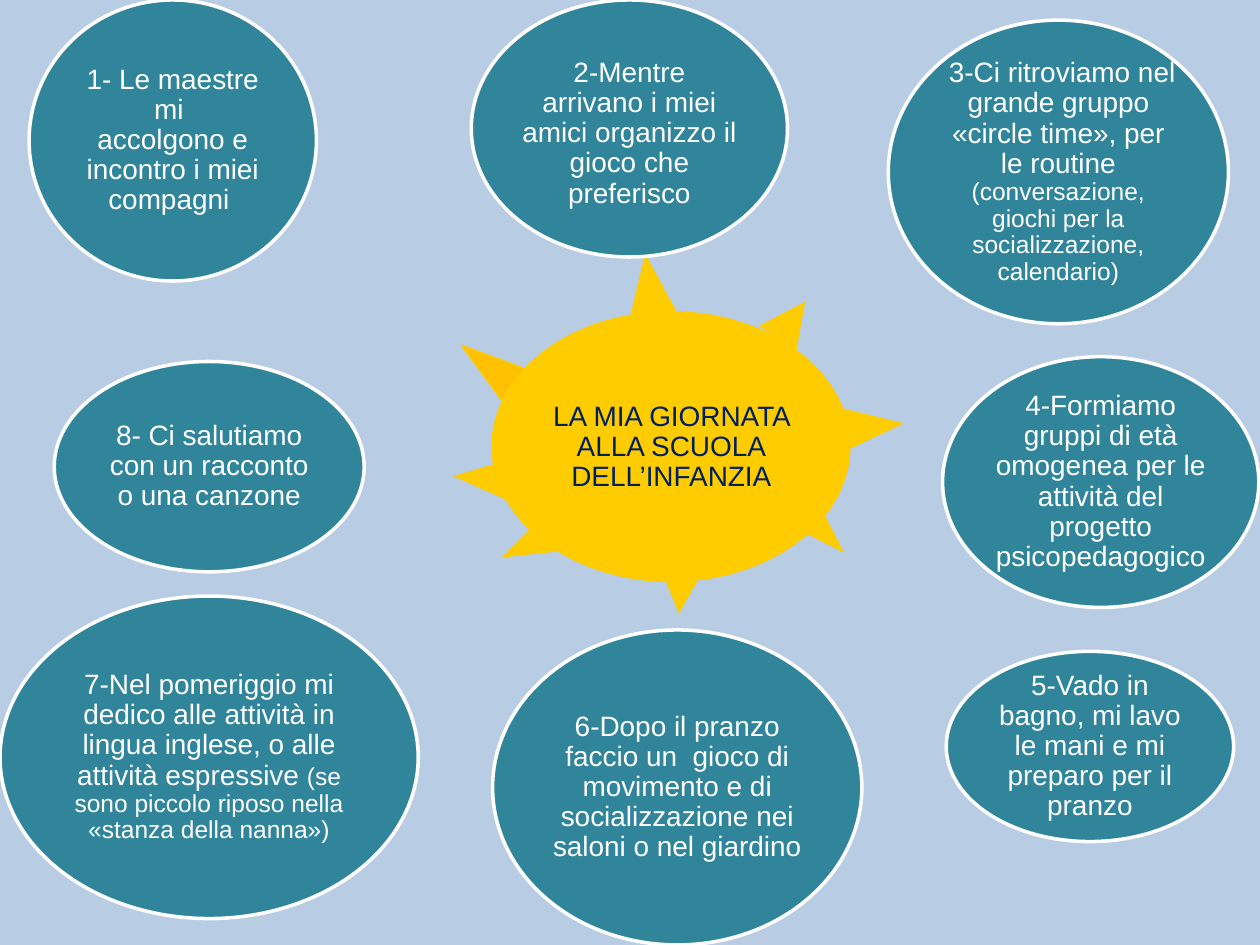
"""Build a slide showing a nursery school day as bubbles around a sun."""
from pptx import Presentation
from pptx.dml.color import RGBColor
from pptx.enum.shapes import MSO_SHAPE
from pptx.enum.text import MSO_ANCHOR, MSO_AUTO_SIZE, PP_ALIGN
from pptx.util import Pt

SKY = RGBColor(0xB8, 0xCC, 0xE4)
TEAL = RGBColor(0x31, 0x85, 0x9B)
WHITE = RGBColor(0xFF, 0xFF, 0xFF)
YELLOW = RGBColor(0xFF, 0xCC, 0x00)
ORANGE = RGBColor(0xFF, 0xC0, 0x00)
NAVY = RGBColor(0x00, 0x20, 0x60)

LARGE, SMALL = 16, 14
INSET = 1.44

TITLE = [[("LA MIA GIORNATA ALLA SCUOLA", LARGE)], [("DELL’INFANZIA", LARGE)]]
TITLE_PLACE = (311, 200.9, 145.4, 109.4)
SUN_PLACE = (280.8, 177.8, 205.2, 154.8)

RAYS = [
    (267.8, 188.6, 26, 43.2, 307, ORANGE),
    (263.5, 255.6, 26, 35.3, 273.8, YELLOW),
    (290.2, 292.3, 26, 36.7, 244.4, YELLOW),
    (375.8, 324, 26, 26.6, 183.8, YELLOW),
    (357.1, 144.7, 28, 36.7, 352.5, YELLOW),
    (485.3, 225.4, 26, 36.7, 84.2, YELLOW),
    (439.2, 169.9, 26, 26.6, 36.2, YELLOW),
    (455, 281.5, 26, 40.3, 134.8, YELLOW),
]

BUBBLES = [
    ((16.6, 0, 164.2, 160.6), INSET, [
        [("1- Le maestre mi ", LARGE)],
        [("accolgono e incontro i miei", LARGE)],
        [("compagni ", LARGE)]]),
    ((269.3, 0, 180.7, 146.9), INSET + 6, [
        [("2-Mentre arrivano i miei amici organizzo il gioco che preferisco", LARGE)]]),
    ((507.6, 11.5, 194.4, 173.5), INSET, [
        [(" 3-Ci ritroviamo nel grande gruppo «circle time», per le routine ", LARGE),
         ("(conversazione, giochi per la socializzazione,", SMALL)],
        [("calendario)", SMALL)]]),
    ((538.6, 203.8, 180.7, 143.3), INSET, [
        [("4-Formiamo gruppi di età omogenea per le attività del progetto "
          "psicopedagogico", LARGE)]]),
    ((540.7, 372.2, 164.2, 108.7), INSET, [
        [("5-Vado in bagno, mi lavo le mani e mi preparo per il pranzo", LARGE)]]),
    ((281.5, 360, 211, 180), INSET, [
        [("6-Dopo il pranzo faccio un  gioco di movimento e di socializzazione "
          "nei saloni o nel giardino", LARGE)]]),
    ((0, 340.6, 239, 184.3), INSET, [
        [("7-Nel pomeriggio mi dedico alle attività in lingua inglese, "
          "o alle attività espressive ", LARGE),
         ("(se sono piccolo riposo nella «stanza della nanna»)", SMALL)]]),
    ((31, 206.6, 177.1, 120.2), INSET, [
        [("8- Ci salutiamo con un racconto o una canzone", LARGE)]]),
]


def add_figure(page, kind, place, fill, line=None, width=0.75):
    figure = page.shapes.add_shape(kind, *map(Pt, place))
    figure.shadow.inherit = False
    figure.fill.solid()
    figure.fill.fore_color.rgb = fill
    if line is None:
        figure.line.fill.background()
    else:
        figure.line.color.rgb = line
        figure.line.width = Pt(width)
    return figure


def write(box, paragraphs, color, top=INSET):
    frame = box.text_frame
    frame.word_wrap = True
    frame.auto_size = MSO_AUTO_SIZE.NONE
    frame.vertical_anchor = MSO_ANCHOR.MIDDLE
    frame.margin_left = frame.margin_right = frame.margin_bottom = Pt(INSET)
    frame.margin_top = Pt(top)
    for index, spans in enumerate(paragraphs):
        para = frame.add_paragraph() if index else frame.paragraphs[0]
        para.alignment = PP_ALIGN.CENTER
        para.line_spacing = 0.9
        para.font.name = "Arial"
        para.font.color.rgb = color
        for text, size in spans:
            span = para.add_run()
            span.text = text
            span.font.size = Pt(size)


def main():
    deck = Presentation()
    deck.slide_width, deck.slide_height = Pt(720), Pt(540)
    page = deck.slides.add_slide(deck.slide_layouts[5])
    page.background.fill.solid()
    page.background.fill.fore_color.rgb = SKY

    for *place, rotation, fill in RAYS:
        line = YELLOW if fill == ORANGE else None
        ray = add_figure(page, MSO_SHAPE.ISOSCELES_TRIANGLE, place, fill, line)
        ray.rotation = rotation
    sun = add_figure(page, MSO_SHAPE.OVAL, SUN_PLACE, YELLOW)

    title = page.shapes.title
    title.left, title.top, title.width, title.height = map(Pt, TITLE_PLACE)
    write(title, TITLE, NAVY)
    sun._element.addnext(title._element)

    for place, top, paragraphs in BUBBLES:
        bubble = add_figure(page, MSO_SHAPE.OVAL, place, TEAL, WHITE, 2)
        write(bubble, paragraphs, WHITE, top)

    deck.save("out.pptx")


if __name__ == "__main__":
    main()
